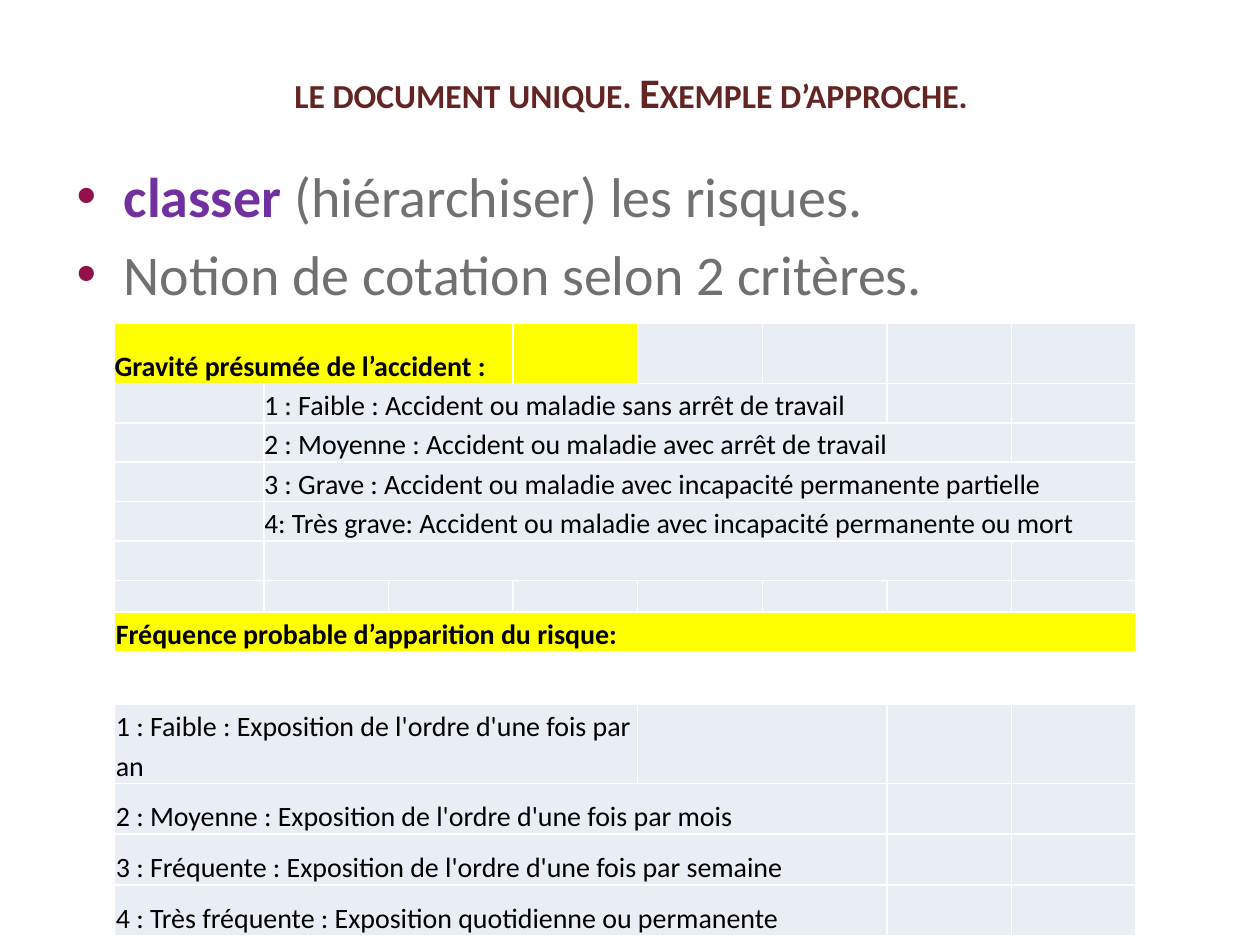
from pptx import Presentation
from pptx.dml.color import RGBColor
from pptx.enum.text import MSO_ANCHOR, PP_ALIGN
from pptx.oxml.ns import qn
from pptx.util import Pt
from lxml.etree import SubElement

FONT = "Calibri"
COLORS = {
    "title": "632523", "accent": "7030A0", "body": "6F7072", "bullet": "93104A",
    "text": "000000", "head": "FFFF00", "cell": "E9EDF4", "white": "FFFFFF",
}
COLS = 8
COL_WIDTHS = [85.4] + [71.2] * (COLS - 1)
SEVERITY = [
    ("1 : Faible : Accident ou maladie sans arrêt de travail", 5),
    ("2 : Moyenne : Accident ou maladie avec arrêt de travail", 6),
    ("3 : Grave : Accident ou maladie avec incapacité permanente partielle", 7),
    ("4: Très grave: Accident ou maladie avec incapacité permanente ou mort", 7),
    ("", 6),
]
FREQUENCY = [
    ("1 : Faible : Exposition de l'ordre d'une fois par an", 4, 45.4),
    ("2 : Moyenne : Exposition de l'ordre d'une fois par mois", 6, 29.1),
    ("3 : Fréquente : Exposition de l'ordre d'une fois par semaine", 6, 29.1),
    ("4 : Très fréquente : Exposition quotidienne ou permanente", 6, 29.1),
]


def rgb(name):
    return RGBColor.from_string(COLORS[name])


def add_run(p, text, size, color, bold=False):
    r = p.add_run()
    r.text = text
    r.font.name, r.font.size, r.font.bold = FONT, Pt(size), bold
    r.font.color.rgb = rgb(color)
    return r


def add_title(s, x, y, w, h):
    sp = s.shapes.title
    sp.left, sp.top, sp.width, sp.height = Pt(x), Pt(y), Pt(w), Pt(h)
    tf = sp.text_frame
    tf.vertical_anchor = MSO_ANCHOR.MIDDLE
    p = tf.paragraphs[0]
    p.alignment = PP_ALIGN.CENTER
    r = add_run(p, "le document unique. Exemple d’approche.", 24, "title", True)
    r.font._element.set("cap", "small")


def add_bullet(p):
    pPr = p._p.get_or_add_pPr()
    pPr.set("marL", str(Pt(27)))
    pPr.set("indent", str(-Pt(27)))
    clr = SubElement(pPr, qn("a:buClr"))
    SubElement(clr, qn("a:srgbClr"), val=COLORS["bullet"])
    SubElement(pPr, qn("a:buFont"), typeface="Arial")
    SubElement(pPr, qn("a:buChar"), char="•")


def add_bullets(s, x, y, w, h):
    tf = s.shapes.add_textbox(Pt(x), Pt(y), Pt(w), Pt(h)).text_frame
    tf.word_wrap = True
    p = tf.paragraphs[0]
    add_bullet(p)
    add_run(p, "classer", 32, "accent", True)
    add_run(p, " (hiérarchiser) les risques.", 32, "body")
    p = tf.add_paragraph()
    add_bullet(p)
    p.space_before = Pt(6.4)
    add_run(p, "Notion de cotation selon 2 critères.", 32, "body")


def set_borders(cell):
    tcPr = cell._tc.get_or_add_tcPr()
    for i, side in enumerate(("lnL", "lnR", "lnT", "lnB")):
        ln = tcPr.makeelement(qn(f"a:{side}"), {"w": str(Pt(1))})
        fill = SubElement(ln, qn("a:solidFill"))
        SubElement(fill, qn("a:srgbClr"), val=COLORS["white"])
        tcPr.insert(i, ln)


def format_cell(cell, text, fill, bold, inset, spacing):
    cell.fill.solid()
    cell.fill.fore_color.rgb = rgb(fill)
    set_borders(cell)
    cell.vertical_anchor = MSO_ANCHOR.BOTTOM
    cell.margin_left = cell.margin_right = cell.margin_top = Pt(inset)
    cell.margin_bottom = 0
    p = cell.text_frame.paragraphs[0]
    if text:
        p.line_spacing = spacing
        add_run(p, text, 16, "text", bold)
    else:
        SubElement(p._p, qn("a:endParaRPr"), sz="1000")


def table_rows():
    def blank(n, fill="cell"):
        return [("", 1, fill)] * n

    rows = [(34.2, [("Gravité présumée de l’accident :", 3, "head")]
             + blank(1, "head") + blank(4))]
    for text, span in SEVERITY:
        rows.append((22.5, blank(1) + [(text, span, "cell")] + blank(COLS - 1 - span)))
    rows.append((18.1, blank(COLS)))
    rows.append((22.9, [("Fréquence probable d’apparition du risque:", COLS, "head")]))
    rows.append((29.7, blank(3, "white") + [("", 2, "white")] + blank(3, "white")))
    for text, span, height in FREQUENCY:
        gap = [("", 6 - span, "cell")] if span < 6 else []
        rows.append((height, [(text, span, "cell")] + gap + blank(2)))
    return rows


def add_risk_table(s, x, y):
    rows = table_rows()
    height = sum(h for h, _ in rows)
    table = s.shapes.add_table(len(rows), COLS, Pt(x), Pt(y),
                               Pt(sum(COL_WIDTHS)), Pt(height)).table
    table.first_row = table.horz_banding = False
    for col, width in zip(table.columns, COL_WIDTHS):
        col.width = Pt(width)
    frequency_start = len(SEVERITY) + 2
    for i, (height, cells) in enumerate(rows):
        table.rows[i].height = Pt(height)
        inset, spacing = (0.7, 1.15) if i >= frequency_start else (0, 1)
        j = 0
        for text, span, fill in cells:
            if span > 1:
                table.cell(i, j).merge(table.cell(i, j + span - 1))
            for k in range(j, j + span):
                format_cell(table.cell(i, k), text if k == j else "", fill,
                            fill == "head", inset, spacing)
            j += span


def main():
    prs = Presentation()
    prs.slide_width, prs.slide_height = Pt(720), Pt(540)
    s = prs.slides.add_slide(prs.slide_layouts[5])
    add_title(s, 36.7, 20.9, 648, 62.6)
    add_bullets(s, 36.7, 88.6, 648, 393.8)
    add_risk_table(s, 65.5, 185)
    prs.save("out.pptx")


if __name__ == "__main__":
    main()
